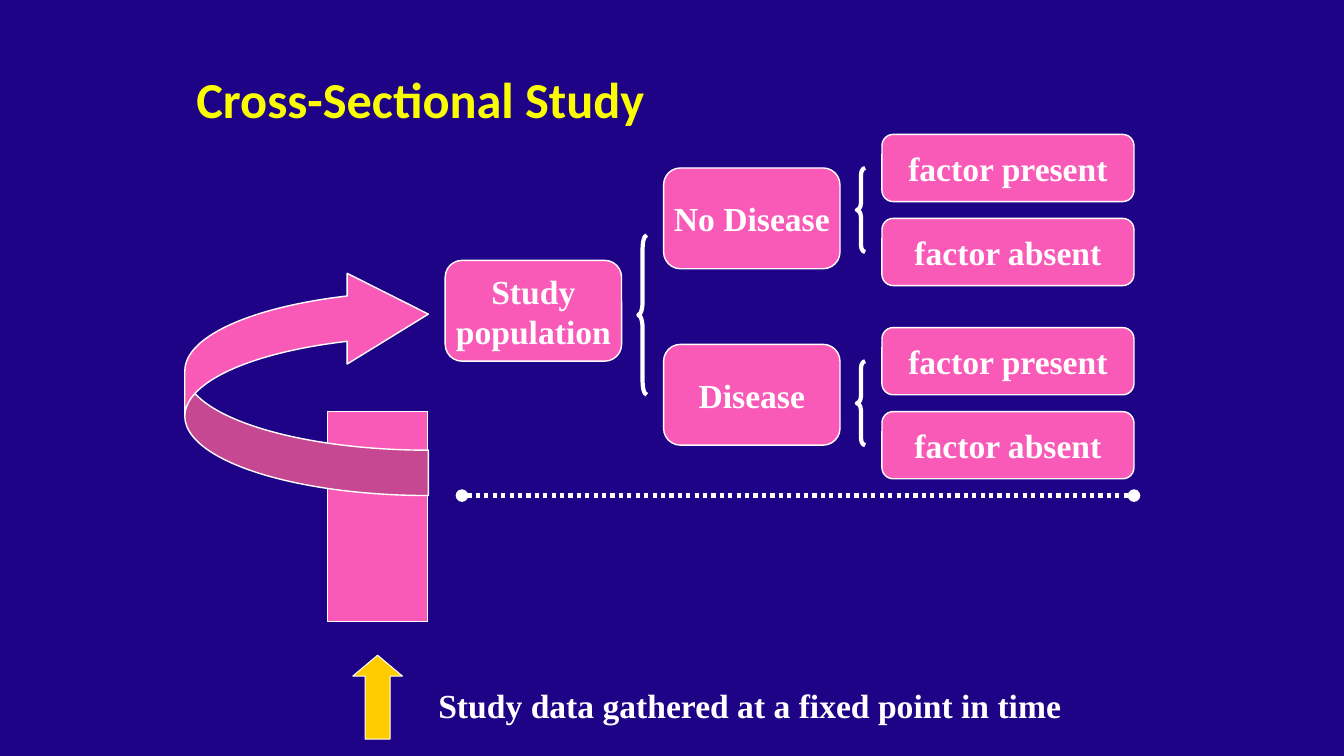
import pptx
import pptx.util
import pptx.dml.color
import pptx.enum.dml
import pptx.enum.shapes
import pptx.enum.text
import pptx.oxml
import pptx.oxml.ns
from dataclasses import dataclass

Pt = pptx.util.Pt
Kind = pptx.enum.shapes.MSO_SHAPE
Align = pptx.enum.text.PP_ALIGN
Anchor = pptx.enum.text.MSO_ANCHOR
Fit = pptx.enum.text.MSO_AUTO_SIZE


@dataclass(frozen=True)
class Theme:
    back: str = "1F0387"
    pink: str = "F95AB7"
    gold: str = "FFCC00"
    white: str = "FFFFFF"
    lemon: str = "FAFD00"
    head: str = "Calibri"
    body: str = "Times New Roman"
    large: int = 36
    base: int = 24


theme = Theme()


def rgb(code):
    return pptx.dml.color.RGBColor.from_string(code)


def write(shape, words, font=theme.body, size=theme.base, color=theme.white,
          align=Align.LEFT, anchor=Anchor.MIDDLE, wrap=False, fit=Fit.NONE):
    frame = shape.text_frame
    frame.text = words
    frame.word_wrap = wrap
    frame.auto_size = fit
    frame.vertical_anchor = anchor
    for para in frame.paragraphs:
        para.alignment = align
        for run in para.runs:
            run.font.name = font
            run.font.size = Pt(size)
            run.font.bold = True
            run.font.color.rgb = rgb(color)


def draw(slide, kind, x, y, w, h, fill=theme.pink, width=1, adjust=()):
    shape = slide.shapes.add_shape(kind, Pt(x), Pt(y), Pt(w), Pt(h))
    shape.shadow.inherit = False
    if fill:
        shape.fill.solid()
        shape.fill.fore_color.rgb = rgb(fill)
    else:
        shape.fill.background()
    shape.line.color.rgb = rgb(theme.white)
    shape.line.width = Pt(width)
    for i, value in enumerate(adjust):
        shape.adjustments[i] = value
    return shape


def node(slide, words, x, y, w, h):
    box = draw(slide, Kind.ROUNDED_RECTANGLE, x, y, w, h, adjust=[0.167])
    write(box, words, align=Align.CENTER)


def brace(slide, x, y, h):
    w = 6
    draw(slide, Kind.LEFT_BRACE, x, y, w, h, fill=None, width=3,
         adjust=[h / 12 / w, 0.5])


def title(slide, x, y, w, h):
    shape = slide.shapes.title
    shape.left, shape.top, shape.width, shape.height = map(Pt, (x, y, w, h))
    write(shape, "Cross-Sectional Study", font=theme.head, size=theme.large,
          color=theme.lemon, wrap=True)


def branch(slide, words, x, y, drop):
    node(slide, words, x, y + drop, 126, 72)
    brace(slide, x + 138, y + 24, 60)
    for i, factor in enumerate(("factor present", "factor absent")):
        node(slide, factor, x + 156, y + 60 * i, 180, 48)


def tree(slide, x, y):
    node(slide, "Study\npopulation", x, y + 90, 126, 72)
    branch(slide, "No Disease", x + 156, y, 24)
    branch(slide, "Disease", x + 156, y + 138, 12)
    brace(slide, x + 138, y + 72, 114)


def source(slide, x, y):
    draw(slide, Kind.RECTANGLE, x + 102, y + 102, 71.5, 150)
    draw(slide, Kind.UP_ARROW, x + 120, y + 276, 35.5, 60,
         fill=theme.gold, width=0.75, adjust=[0.5, 0.421])
    note = slide.shapes.add_textbox(Pt(x + 174), Pt(y + 294), Pt(464), Pt(36))
    write(note, "Study data gathered at a fixed point in time",
          anchor=Anchor.TOP, fit=Fit.SHAPE_TO_FIT_TEXT)
    curve = draw(slide, Kind.CURVED_RIGHT_ARROW, x, y, 174, 162,
                 adjust=[0.2, 0.4, 0.358])
    curve._element.spPr.xfrm.set("flipV", "1")


def span(slide, x, y, w):
    rule = slide.shapes.add_connector(
        pptx.enum.shapes.MSO_CONNECTOR.STRAIGHT, Pt(x), Pt(y), Pt(x + w), Pt(y))
    rule.line.color.rgb = rgb(theme.white)
    rule.line.width = Pt(3)
    rule.line.dash_style = pptx.enum.dml.MSO_LINE.ROUND_DOT
    edge = rule.line._get_or_add_ln()
    for tag in ("a:headEnd", "a:tailEnd"):
        end = pptx.oxml.parse_xml(
            f'<{tag} {pptx.oxml.ns.nsdecls("a")} type="oval"/>')
        edge.append(end)
    rule._element.spPr.append(pptx.oxml.parse_xml(
        f'<a:effectLst {pptx.oxml.ns.nsdecls("a")}/>'))


def main():
    deck = pptx.Presentation()
    deck.slide_width, deck.slide_height = Pt(960), Pt(540)
    slide = deck.slides.add_slide(deck.slide_layouts[5])
    slide.background.fill.solid()
    slide.background.fill.fore_color.rgb = rgb(theme.back)
    title(slide, 133, 37.5, 444, 66)
    source(slide, 132, 192)
    tree(slide, 318, 96)
    span(slide, 330, 354, 480)
    deck.save("out.pptx")


if __name__ == "__main__":
    main()
